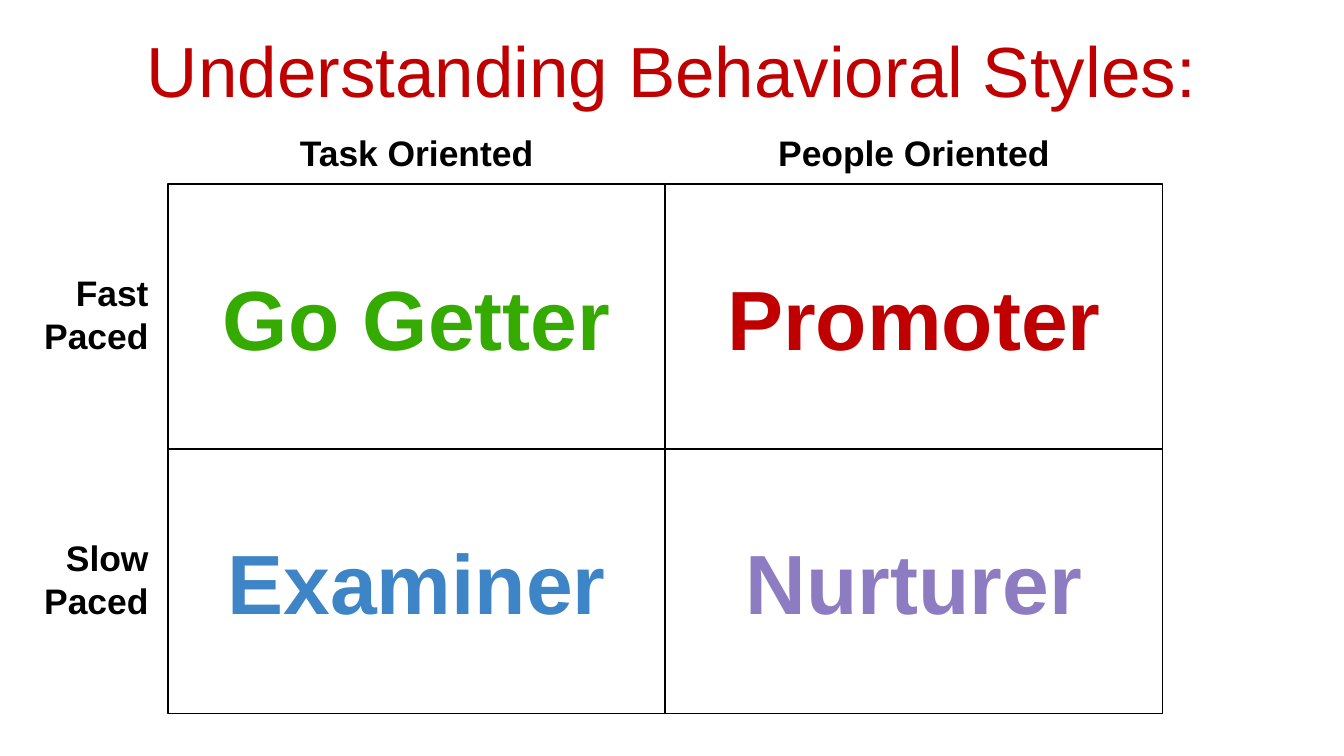
from pptx import Presentation
from pptx.dml.color import RGBColor
from pptx.enum.shapes import MSO_SHAPE
from pptx.enum.text import MSO_ANCHOR, PP_ALIGN
from pptx.util import Pt

BLACK = "000000"
RED = "C00000"
GRID_LEFT, GRID_TOP = 90, 98.64
CELL_WIDTH, CELL_HEIGHT = 266.4, 141.84
PACES = ["Fast Paced", "Slow Paced"]
ORIENTATIONS = ["Task Oriented", "People Oriented"]
STYLES = [
    [("Go Getter", "35AA00"), ("Promoter", RED)],
    [("Examiner", "3D85C6"), ("Nurturer", "8E7CC3")],
]


def color(hex_code):
    """Turn a hex string into a colour."""
    return RGBColor.from_string(hex_code)


def write(shape, text, size=19, fill=BLACK, bold=True, align=PP_ALIGN.CENTER,
          anchor=MSO_ANCHOR.TOP, inset=3.6):
    """Put formatted text into a shape."""
    frame = shape.text_frame
    frame.word_wrap = True
    frame.vertical_anchor = anchor
    frame.margin_left = frame.margin_right = Pt(5.4)
    frame.margin_top = frame.margin_bottom = Pt(inset)
    paragraph = frame.paragraphs[0]
    paragraph.alignment = align
    run = paragraph.add_run()
    run.text = text
    run.font.name = "Arial"
    run.font.size = Pt(size)
    run.font.bold = bold
    run.font.color.rgb = color(fill)


def add_label(slide, text, left, top, width, height, **text_format):
    """Add a text box."""
    label = slide.shapes.add_textbox(Pt(left), Pt(top), Pt(width), Pt(height))
    write(label, text, **text_format)


def add_quadrant(slide, style, left, top, fill):
    """Add one outlined cell of the style grid."""
    quadrant = slide.shapes.add_shape(
        MSO_SHAPE.RECTANGLE, Pt(left), Pt(top), Pt(CELL_WIDTH), Pt(CELL_HEIGHT))
    quadrant.shadow.inherit = False
    quadrant.fill.background()
    quadrant.line.color.rgb = color(BLACK)
    quadrant.line.width = Pt(0.75)
    write(quadrant, style, size=45, fill=fill, anchor=MSO_ANCHOR.MIDDLE, inset=5.4)


def main():
    """Build the behavioral styles slide."""
    deck = Presentation()
    deck.slide_width, deck.slide_height = Pt(720), Pt(405)
    slide = deck.slides.add_slide(deck.slide_layouts[6])

    add_label(slide, "Understanding Behavioral Styles:", 0, 10.8, 720, 56.16,
              size=38, fill=RED, bold=False)
    column_lefts = [GRID_LEFT + i * CELL_WIDTH for i in range(len(ORIENTATIONS))]
    row_tops = [GRID_TOP + i * CELL_HEIGHT for i in range(len(PACES))]

    for orientation, left in zip(ORIENTATIONS, column_lefts):
        add_label(slide, orientation, left + 40, 66.96, CELL_WIDTH - 80, 31.68)
    for pace, top, styles in zip(PACES, row_tops, STYLES):
        add_label(slide, pace, 5.04, top + 43.2, 79.92, 55.44, align=PP_ALIGN.RIGHT)
        for (style, fill), left in zip(styles, column_lefts):
            add_quadrant(slide, style, left, top, fill)

    deck.save("out.pptx")


if __name__ == "__main__":
    main()
